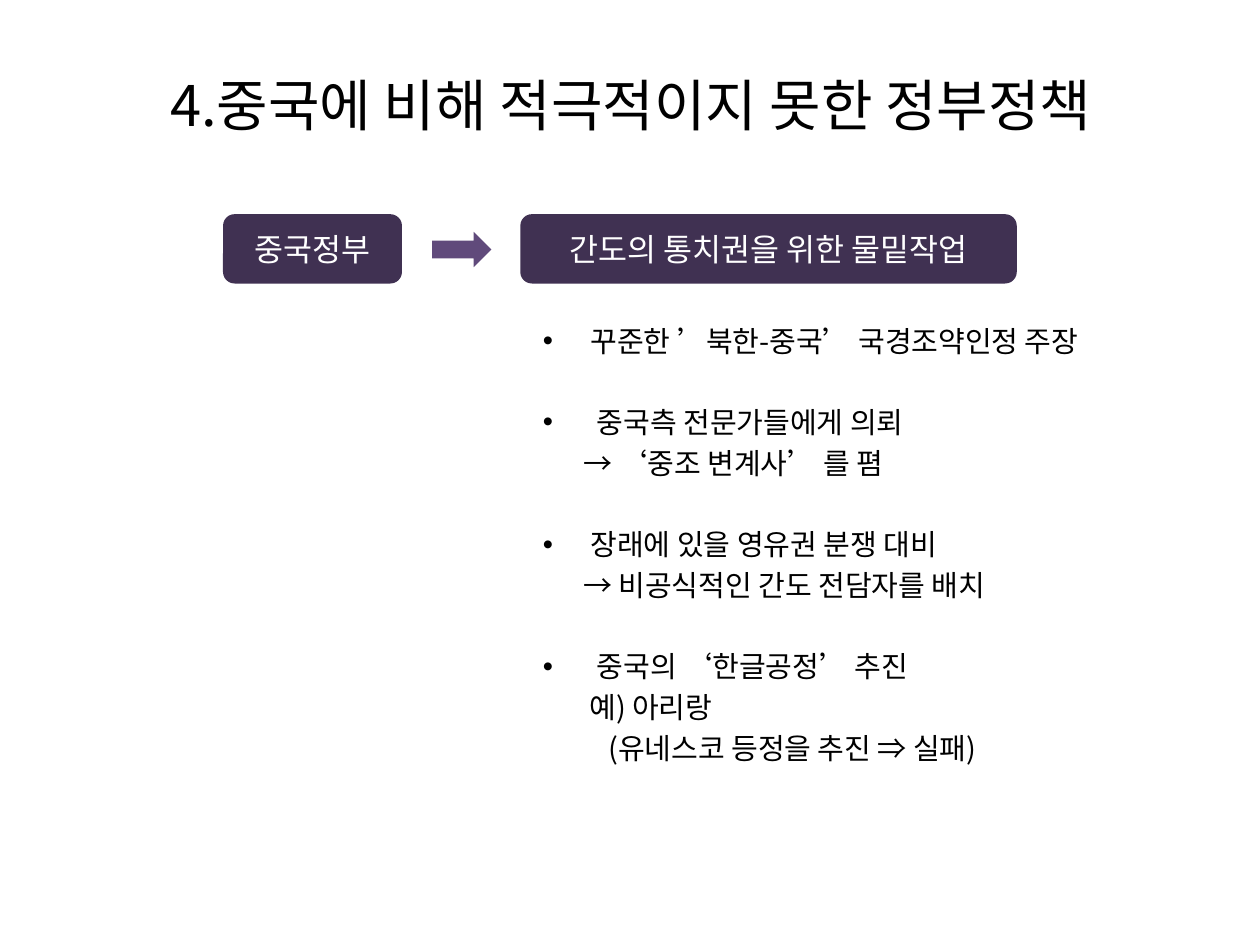
from pptx import Presentation
from pptx.dml.color import RGBColor
from pptx.enum.shapes import MSO_SHAPE as SHAPE
from pptx.enum.text import MSO_ANCHOR as ANCHOR, PP_ALIGN as ALIGN
from pptx.oxml.ns import qn
from pptx.util import Inches, Pt
from lxml import etree

FONT = "Noto Sans CJK KR"
COLORS = {"text": "000000", "box": "403152", "arrow": "604A7B", "box_text": "FFFFFF"}
LINE = Pt(23.25)


def format_runs(p, size, color):
    for r in p.runs:
        r.font.size = Pt(size)
        r.font.name = FONT
        r.font.color.rgb = RGBColor.from_string(COLORS[color])
        ea = etree.SubElement(r.font._element, qn("a:ea"))
        ea.set("typeface", FONT)


prs = Presentation()
prs.slide_width, prs.slide_height = Inches(10), Inches(7.5)
s = prs.slides.add_slide(prs.slide_layouts[6])

# Title
title = s.shapes.add_textbox(Inches(0.51), Inches(0.44), Inches(9), Inches(0.77))
tf = title.text_frame
tf.word_wrap = True
tf.vertical_anchor = ANCHOR.MIDDLE
tf.text = "4.중국에 비해 적극적이지 못한 정부정책"
tf.paragraphs[0].alignment = ALIGN.CENTER
format_runs(tf.paragraphs[0], 32, "text")

# Bulleted list: (text, bulleted, text indent in inches)
lines = [
    ("꾸준한 ’북한-중국’ 국경조약인정 주장", True, 0.38),
    ("중국측 전문가들에게 의뢰", True, 0.43),
    ("→ ‘중조 변계사’ 를 폄", False, 0.32),
    ("장래에 있을 영유권 분쟁 대비", True, 0.38),
    ("→ 비공식적인 간도 전담자를 배치", False, 0.32),
    ("중국의 ‘한글공정’ 추진", True, 0.43),
    ("예) 아리랑", False, 0.37),
    ("(유네스코 등정을 추진 ⇒ 실패)", False, 0.52),
]
body = s.shapes.add_textbox(Inches(4.21), Inches(2.47), Inches(4.96), Inches(4.65))
tf = body.text_frame
tf.word_wrap = True
for i, (text, bulleted, indent) in enumerate(lines):
    p = tf.paragraphs[0] if i == 0 else tf.add_paragraph()
    p.text = text
    p.line_spacing = LINE
    p.space_before = LINE if bulleted and i else Pt(0)
    format_runs(p, 16.6, "text")
    pPr = p._p.get_or_add_pPr()
    pPr.set("marL", str(Inches(indent)))
    if bulleted:
        pPr.set("indent", str(-Inches(indent)))
        etree.SubElement(pPr, qn("a:buFont")).set("typeface", "Arial")
        etree.SubElement(pPr, qn("a:buChar")).set("char", "•")

# Boxes and the arrow between them
flow = [
    (SHAPE.ROUNDED_RECTANGLE, 1.77, 1.7, 1.42, 0.55, "box", "중국정부"),
    (SHAPE.RIGHT_ARROW, 3.43, 1.84, 0.47, 0.28, "arrow", ""),
    (SHAPE.FLOWCHART_ALTERNATE_PROCESS, 4.13, 1.7, 3.94, 0.55, "box",
     "간도의 통치권을 위한 물밑작업"),
]
for kind, left, top, width, height, color, text in flow:
    sp = s.shapes.add_shape(kind, Inches(left), Inches(top), Inches(width), Inches(height))
    sp.shadow.inherit = False
    sp.fill.solid()
    sp.fill.fore_color.rgb = RGBColor.from_string(COLORS[color])
    sp.line.fill.background()
    if text:
        tf = sp.text_frame
        tf.vertical_anchor = ANCHOR.MIDDLE
        tf.text = text
        tf.paragraphs[0].alignment = ALIGN.CENTER
        format_runs(tf.paragraphs[0], 18, "box_text")

prs.save("out.pptx")
